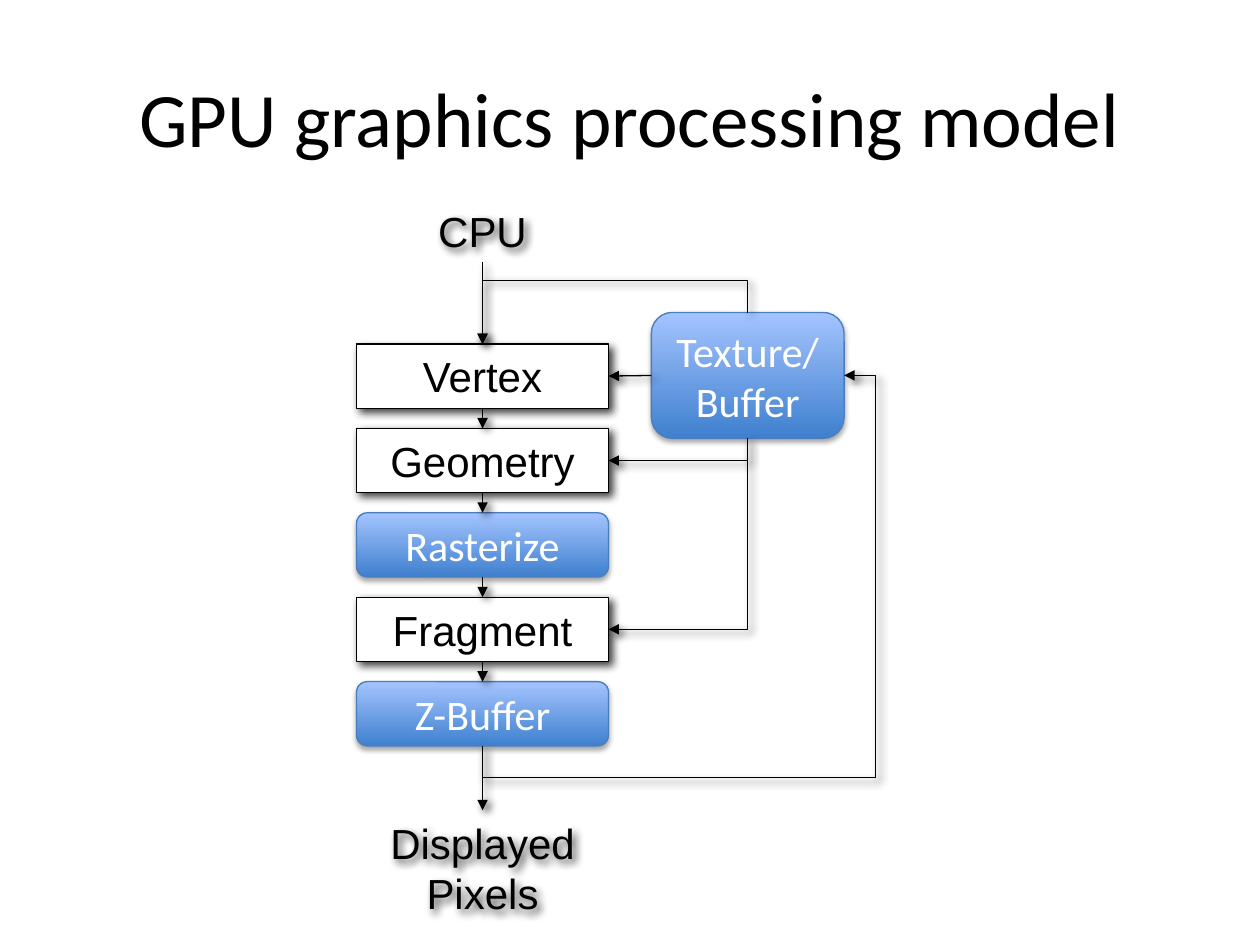
import pptx
import pptx.util
import pptx.dml.color
import pptx.enum.shapes
import pptx.enum.text
import pptx.oxml
import pptx.oxml.ns

COLORS = {"ink": "000000", "paper": "FFFFFF", "edge": "4B7EBC",
          "deep": "3F80CE", "light": "A4C4FF"}
SHAPES = pptx.enum.shapes.MSO_SHAPE
LINES = pptx.enum.shapes.MSO_CONNECTOR
rgb = {name: pptx.dml.color.RGBColor.from_string(value) for name, value in COLORS.items()}

deck = pptx.Presentation()
deck.slide_width = pptx.util.Inches(10)
deck.slide_height = pptx.util.Inches(7.5)
slide = deck.slides.add_slide(deck.slide_layouts[6])
UNIT = deck.slide_width // 10  # the grid has 10 columns and 7.5 rows

# Pipeline grid
STAGE_LEFT, STAGE_TOP = 2.83, 2.73
STAGE_WIDTH, STAGE_HEIGHT, PITCH = 2, 0.51, 0.67
CENTER, STAGE_RIGHT = STAGE_LEFT + STAGE_WIDTH / 2, STAGE_LEFT + STAGE_WIDTH
TEXTURE_LEFT, TEXTURE_TOP, TEXTURE_WIDTH, TEXTURE_HEIGHT = 5.17, 2.48, 1.53, 1
TEXTURE_CENTER = TEXTURE_LEFT + TEXTURE_WIDTH / 2
TEXTURE_BOTTOM = TEXTURE_TOP + TEXTURE_HEIGHT
PIPELINE_BOTTOM = STAGE_TOP + 4 * PITCH + STAGE_HEIGHT
OUTPUT_TOP = 6.43


def add_effects(shape, alpha=75, blur=5, distance=3, angle=45, arrow=False):
    """Give a shape an outer shadow and, for a connector, its line and arrowhead."""
    namespace = pptx.oxml.ns.nsdecls("a")
    if arrow:
        shape.line.color.rgb = rgb["ink"]
        shape.line.width = pptx.util.Pt(0.75)
        shape.line._get_or_add_ln().append(
            pptx.oxml.parse_xml(f'<a:tailEnd {namespace} type="triangle"/>'))
    shape._element.spPr.append(pptx.oxml.parse_xml(
        f'<a:effectLst {namespace}><a:outerShdw blurRad="{int(blur * 12700)}" '
        f'dist="{int(distance * 12700)}" dir="{angle * 60000}" algn="ctr" rotWithShape="0">'
        f'<a:srgbClr val="{COLORS["ink"]}"><a:alpha val="{alpha * 1000}"/></a:srgbClr>'
        '</a:outerShdw></a:effectLst>'))


def write(shape, text, font, color, size=24):
    frame = shape.text_frame
    frame.word_wrap = True
    frame.vertical_anchor = pptx.enum.text.MSO_ANCHOR.MIDDLE
    frame.text = text
    for paragraph in frame.paragraphs:
        paragraph.alignment = pptx.enum.text.PP_ALIGN.CENTER
        for run in paragraph.runs:
            run.font.name = font
            run.font.size = pptx.util.Pt(size)
            run.font.color.rgb = rgb[color]


# Title, input and output labels
for text, area, font, size in [
    ("GPU graphics processing model", (0.5, 0.3, 9, 1.25), "Calibri", 44),
    ("CPU", (STAGE_LEFT, 1.58, STAGE_WIDTH, 0.5), "Arial", 24),
    ("Displayed\nPixels", (STAGE_LEFT, OUTPUT_TOP, STAGE_WIDTH, 0.91), "Arial", 24),
]:
    label = slide.shapes.add_textbox(*[int(n * UNIT) for n in area])
    write(label, text, font, "ink", size)
    if font == "Arial":
        add_effects(label)

# Programmable stages are white, fixed-function blocks are blue
blocks = [(name, fixed, (STAGE_LEFT, STAGE_TOP + row * PITCH, STAGE_WIDTH, STAGE_HEIGHT))
          for row, (name, fixed) in enumerate([
              ("Vertex", False), ("Geometry", False), ("Rasterize", True),
              ("Fragment", False), ("Z-Buffer", True)])]
blocks.append(("Texture/Buffer", True,
               (TEXTURE_LEFT, TEXTURE_TOP, TEXTURE_WIDTH, TEXTURE_HEIGHT)))
placed = []
for name, fixed, area in blocks:
    block = slide.shapes.add_shape(SHAPES.ROUNDED_RECTANGLE if fixed else SHAPES.RECTANGLE,
                                   *[int(n * UNIT) for n in area])
    block.line.width = pptx.util.Pt(0.75)
    block.line.color.rgb = rgb["edge" if fixed else "ink"]
    if fixed:
        block.fill.gradient()
        block.fill.gradient_angle = 90
        for stop, color in zip(block.fill.gradient_stops, ("deep", "light")):
            stop.color.rgb = rgb[color]
        add_effects(block, alpha=35, blur=3.1, distance=1.8, angle=90)
        write(block, name, "Calibri", "paper")
    else:
        block.fill.solid()
        block.fill.fore_color.rgb = rgb["paper"]
        add_effects(block)
        write(block, name, "Arial", "ink")
    placed.append(block)
*stages, texture = placed

# Straight flow: CPU, the five stages, the display, and texture to vertex
center_x, texture_y = int(CENTER * UNIT), int((TEXTURE_TOP + TEXTURE_HEIGHT / 2) * UNIT)
links = [(None, 0, stages[0], 0), (stages[-1], 2, None, 0), (texture, 1, stages[0], 3)]
links += [(upper, 2, lower, 0) for upper, lower in zip(stages, stages[1:])]
for source, source_side, target, target_side in links:
    flow = slide.shapes.add_connector(LINES.STRAIGHT, center_x, int(2.08 * UNIT),
                                      center_x, int(OUTPUT_TOP * UNIT))
    if source is not None:
        flow.begin_connect(source, source_side)
    if target is not None:
        flow.end_connect(target, target_side)
    add_effects(flow, arrow=True)

# Elbows: start, end, preset, rotation, flipped, adjustments
for start, end, preset, rotation, flipped, adjustments in [
    ((TEXTURE_CENTER, TEXTURE_BOTTOM), (STAGE_RIGHT, STAGE_TOP + 3 * PITCH + STAGE_HEIGHT / 2),
     "bentConnector2", 90, False, []),
    ((TEXTURE_CENTER, TEXTURE_BOTTOM), (STAGE_RIGHT, STAGE_TOP + PITCH + STAGE_HEIGHT / 2),
     "bentConnector2", 90, False, []),
    ((CENTER, PIPELINE_BOTTOM), (TEXTURE_LEFT + TEXTURE_WIDTH, TEXTURE_TOP + TEXTURE_HEIGHT / 2),
     "bentConnector4", 90, True, [-8500, 108700]),
    ((TEXTURE_CENTER, TEXTURE_TOP), (CENTER, STAGE_TOP),
     "bentConnector3", 270, True, [-102500]),
]:
    # A quarter turn swaps the width and height of the connector's frame
    middle_x, middle_y = (start[0] + end[0]) / 2, (start[1] + end[1]) / 2
    half_w, half_h = abs(end[1] - start[1]) / 2, abs(end[0] - start[0]) / 2
    corners = [(middle_x - half_w, middle_y - half_h), (middle_x + half_w, middle_y + half_h)]
    if flipped:
        corners.reverse()
    elbow = slide.shapes.add_connector(LINES.ELBOW,
                                       *[int(n * UNIT) for corner in corners for n in corner])
    properties = elbow._element.spPr
    properties.find(pptx.oxml.ns.qn("a:xfrm")).set("rot", str(rotation * 60000))
    geometry = properties.find(pptx.oxml.ns.qn("a:prstGeom"))
    geometry.set("prst", preset)
    guides = geometry.find(pptx.oxml.ns.qn("a:avLst"))
    for number, value in enumerate(adjustments, 1):
        name = "adj" + str(number)
        guides.append(pptx.oxml.parse_xml(
            f'<a:gd {pptx.oxml.ns.nsdecls("a")} name="{name}" fmla="val {value}"/>'))
    add_effects(elbow, arrow=True)

deck.save("out.pptx")
